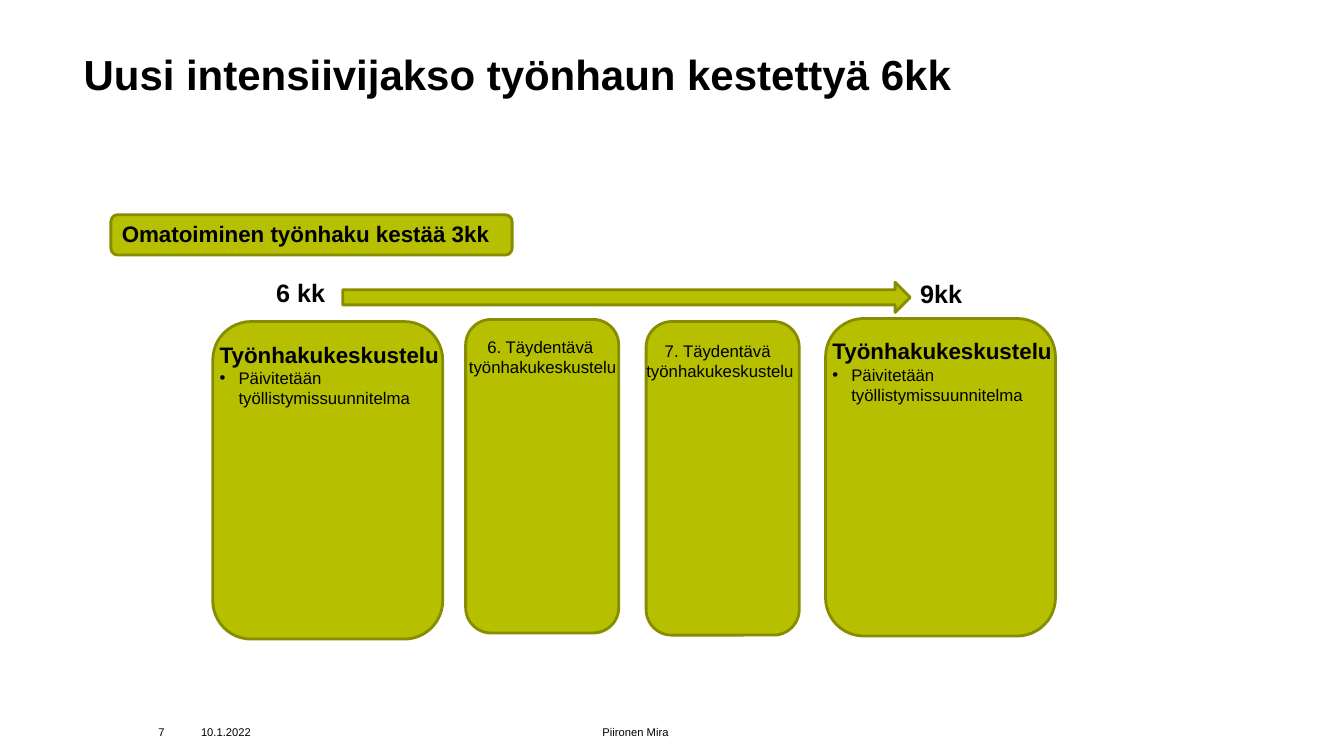
from lxml import etree
from pptx import Presentation
from pptx.dml.color import RGBColor
from pptx.enum.shapes import MSO_SHAPE
from pptx.enum.text import MSO_ANCHOR, MSO_AUTO_SIZE, PP_ALIGN
from pptx.oxml.ns import qn
from pptx.util import Pt

ROUNDED = MSO_SHAPE.ROUNDED_RECTANGLE
ARROW = MSO_SHAPE.RIGHT_ARROW
TOP, MIDDLE = MSO_ANCHOR.TOP, MSO_ANCHOR.MIDDLE
LEFT, CENTER, RIGHT = PP_ALIGN.LEFT, PP_ALIGN.CENTER, PP_ALIGN.RIGHT
FONT = "Arial"
BLACK, LIME, OLIVE = "000000", "B6BF00", "878D00"
BULLET_INDENT = 13.5


def color(hex_string):
    return RGBColor.from_string(hex_string)


def style(paragraph, size, bold=False, align=LEFT):
    paragraph.alignment = align
    paragraph.font.name = FONT
    paragraph.font.size = Pt(size)
    paragraph.font.bold = bold
    paragraph.font.color.rgb = color(BLACK)


def add_panel(slide, preset, left, top, width, height):
    shape = slide.shapes.add_shape(preset, Pt(left), Pt(top), Pt(width), Pt(height))
    shape.shadow.inherit = False
    shape.fill.solid()
    shape.fill.fore_color.rgb = color(LIME)
    shape.line.color.rgb = color(OLIVE)
    shape.line.width = Pt(2)


def add_text(slide, box, lines, size, bold=False, align=LEFT, wrap=True):
    """Add a text box with one paragraph per line and return its text frame."""
    frame = slide.shapes.add_textbox(*(Pt(length) for length in box)).text_frame
    frame.word_wrap = wrap
    frame.text = "\n".join(lines)
    for paragraph in frame.paragraphs:
        style(paragraph, size, bold, align)
    return frame


def add_bullet(paragraph):
    properties = paragraph._p.get_or_add_pPr()
    properties.set("marL", str(Pt(BULLET_INDENT)))
    properties.set("indent", str(-Pt(BULLET_INDENT)))
    etree.SubElement(properties, qn("a:buFont"), typeface=FONT)
    etree.SubElement(properties, qn("a:buChar"), char="•")


def add_title(slide, left, top, width, height):
    title = slide.shapes.title
    title.left, title.top, title.width, title.height = map(Pt, (left, top, width, height))
    frame = title.text_frame
    frame.text = "Uusi intensiivijakso työnhaun kestettyä 6kk"
    frame.auto_size = MSO_AUTO_SIZE.NONE
    frame.vertical_anchor = TOP
    style(frame.paragraphs[0], 30, bold=True)


def add_footer(slide, left, top, height):
    fields = [("7", 38, RIGHT), ("10.1.2022", 88, CENTER), ("Piironen Mira", 497, CENTER)]
    for text, width, align in fields:
        frame = add_text(slide, (left, top, width, height), [text], 8, align=align)
        frame.vertical_anchor = MIDDLE
        frame.margin_left = frame.margin_right = 0
        frame.margin_top = frame.margin_bottom = 0
        left += width


def add_heading(slide, left, top, width, height):
    add_panel(slide, ROUNDED, left, top, width, height)
    add_text(slide, (left + 0.7, top, width - 4, height - 2),
             ["Omatoiminen työnhaku kestää 3kk"], 16, bold=True)


def add_timeline(slide, left, top, width, height):
    add_text(slide, (left - 54.7, top - 7.2, 49.7, 28.8), ["6 kk"], 18, bold=True, wrap=False)
    add_panel(slide, ARROW, left, top, width, height)
    add_text(slide, (left + width, top - 6.5, 44.6, 28.8), ["9kk"], 18, bold=True, wrap=False)


def add_meeting(slide, left, top, width, height):
    add_panel(slide, ROUNDED, left, top, width, height)
    frame = add_text(slide, (left - 2.2, top + 10.1, width + 15, 75),
                     ["Työnhakukeskustelu"], 16, bold=True)
    paragraph = frame.add_paragraph()
    paragraph.text = "Päivitetään työllistymissuunnitelma"
    add_bullet(paragraph)
    style(paragraph, 12)


def add_follow_up(slide, number, left, top, width, height, text_left, text_top):
    """Add a supplementary meeting; text_left and text_top are offsets in the panel."""
    add_panel(slide, ROUNDED, left, top, width, height)
    add_text(slide, (left + text_left, top + text_top, 120.2, 36),
             [f"{number}. Täydentävä ", "työnhakukeskustelu"], 12, align=CENTER, wrap=False)


def main():
    presentation = Presentation()
    presentation.slide_width, presentation.slide_height = Pt(960), Pt(540)
    slide = presentation.slides.add_slide(presentation.slide_layouts[5])
    add_title(slide, 52.5, 31, 735, 88)
    add_footer(slide, 79.5, 515.5, 15)
    add_heading(slide, 79.2, 153.4, 286.6, 28.8)
    add_meeting(slide, 152, 229.7, 164.2, 226.8)
    add_follow_up(slide, 6, 332.6, 228.2, 109.4, 224, -5, 8.7)
    add_follow_up(slide, 7, 461.5, 229.7, 109.4, 224, -7.2, 10.1)
    add_timeline(slide, 244.8, 201.6, 405.4, 21.6)
    add_meeting(slide, 589.7, 227.5, 164.2, 226.8)
    presentation.save("out.pptx")


if __name__ == "__main__":
    main()
